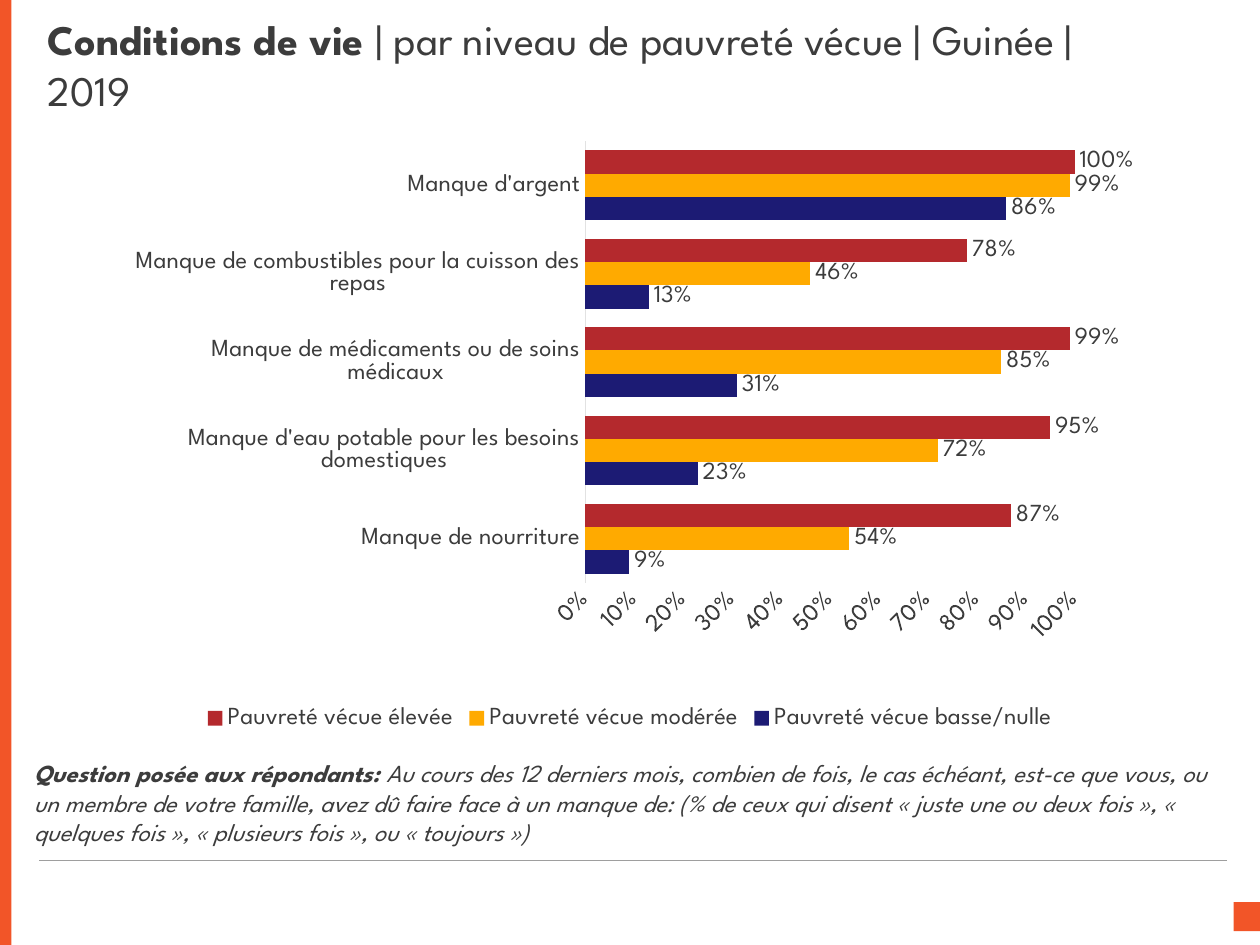
from lxml import etree
from pptx import Presentation
from pptx.chart.data import CategoryChartData
from pptx.dml.color import RGBColor
from pptx.enum.chart import XL_CHART_TYPE, XL_LABEL_POSITION, XL_LEGEND_POSITION, XL_TICK_MARK
from pptx.enum.shapes import MSO_CONNECTOR, MSO_SHAPE
from pptx.enum.text import MSO_ANCHOR, MSO_AUTO_SIZE, PP_ALIGN
from pptx.oxml import parse_xml
from pptx.oxml.ns import nsdecls, qn
from pptx.util import Inches, Pt

RECTANGLE = MSO_SHAPE.RECTANGLE
STRAIGHT = MSO_CONNECTOR.STRAIGHT
BARS = XL_CHART_TYPE.BAR_CLUSTERED
OUTSIDE_END = XL_LABEL_POSITION.OUTSIDE_END
BOTTOM = XL_LEGEND_POSITION.BOTTOM
NO_TICK = XL_TICK_MARK.NONE
LEFT = PP_ALIGN.LEFT
MIDDLE = MSO_ANCHOR.MIDDLE
NO_AUTOFIT = MSO_AUTO_SIZE.NONE

FONT = "League Spartan"
TEXT = "3C3C3C"
ORANGE = "F25528"


def color(value):
    return RGBColor.from_string(value)


def style(font, size, bold=None, italic=None):
    font.name = FONT
    font.size = Pt(size)
    font.bold = bold
    font.italic = italic
    font.color.rgb = color(TEXT)


deck = Presentation()
deck.slide_width = Inches(10)
deck.slide_height = Inches(7.5)
page = deck.slides.add_slide(deck.slide_layouts[5])

for left, top, width, height in [(9.79, 7.16, 0.22, 0.23), (0, 0, 0.09, 7.5)]:
    block = page.shapes.add_shape(
        RECTANGLE, Inches(left), Inches(top), Inches(width), Inches(height))
    block.shadow.inherit = False
    block.fill.solid()
    block.fill.fore_color.rgb = color(ORANGE)
    block.line.fill.background()

rule = page.shapes.add_connector(
    STRAIGHT, Inches(0.31), Inches(6.83), Inches(9.74), Inches(6.83))
rule.line.color.rgb = color("9E9E9E")
rule.line.width = Pt(0.25)
etree.SubElement(rule._element.spPr, qn("a:effectLst"))

title = page.shapes.title
title.left, title.top = Inches(0.28), Inches(0.09)
title.width, title.height = Inches(8.62), Inches(0.84)
title.text_frame.vertical_anchor = MIDDLE
question = page.shapes.add_textbox(
    Inches(0.17), Inches(5.97), Inches(9.63), Inches(0.84))

texts = [
    (title, 24, None,
     "Conditions de vie ",
     "| par niveau de pauvreté vécue | Guinée | 2019"),
    (question, 14, True,
     "Question posée aux répondants: ",
     "Au cours des 12 derniers mois, combien de fois, le cas échéant, est-ce que vous, "
     "ou un membre de votre famille, avez dû faire face à un manque de: (% de ceux qui "
     "disent « juste une ou deux fois », « quelques fois », « plusieurs fois », "
     "ou « toujours »)"),
]
for box, size, italic, lead, rest in texts:
    box.text_frame.word_wrap = True
    box.text_frame.auto_size = NO_AUTOFIT
    para = box.text_frame.paragraphs[0]
    para.alignment = LEFT
    for wording, bold in [(lead, True), (rest, False)]:
        span = para.add_run()
        span.text = wording
        style(span.font, size, bold, italic)

data = CategoryChartData(number_format="0%")
data.categories = [
    "Manque de nourriture",
    "Manque d'eau potable pour les besoins domestiques",
    "Manque de médicaments ou de soins médicaux",
    "Manque de combustibles pour la cuisson des repas",
    "Manque d'argent",
]
levels = [
    ("Pauvreté vécue basse/nulle", "1C1B74", [0.09, 0.23, 0.31, 0.13, 0.86]),
    ("Pauvreté vécue modérée", "FFAA00", [0.54, 0.72, 0.85, 0.46, 0.99]),
    ("Pauvreté vécue élevée", "B4292D", [0.87, 0.95, 0.99, 0.78, 1]),
]
for name, fill, values in levels:
    data.add_series(name, values)

chart = page.shapes.add_chart(
    BARS, Inches(1.06), Inches(0.98), Inches(7.94), Inches(4.85), data).chart
style(chart.font, 14)
chart.has_title = False
chart.has_legend = True
chart.legend.position = BOTTOM
chart.legend.include_in_layout = False
style(chart.legend.font, 14)

plot = chart.plots[0]
plot.gap_width = 80
plot.overlap = 0
plot.vary_by_categories = False
for series, (name, fill, values) in zip(plot.series, levels):
    series.format.fill.solid()
    series.format.fill.fore_color.rgb = color(fill)
    labels = series.data_labels
    labels.show_value = True
    labels.position = OUTSIDE_END
    labels.number_format = "0%"
    labels.number_format_is_linked = False
    style(labels.font, 14)

for axis in (chart.category_axis, chart.value_axis):
    axis.major_tick_mark = NO_TICK
    axis.minor_tick_mark = NO_TICK
    axis.has_major_gridlines = False
    style(axis.tick_labels.font, 14)
chart.category_axis.format.line.color.rgb = color("E2E2E2")
chart.category_axis.format.line.width = Pt(0.75)

scale = chart.value_axis
scale.minimum_scale = 0
scale.maximum_scale = 1
scale.major_unit = 0.1
scale.tick_labels.number_format = "0%"
scale.tick_labels.number_format_is_linked = False
scale.format.line.fill.background()
scale._element.find(qn("c:txPr")).find(qn("a:bodyPr")).set("rot", "-2700000")

plot_area = chart._chartSpace.chart.plotArea
for layout in plot_area.findall(qn("c:layout")):
    plot_area.remove(layout)
plot_area.insert(0, parse_xml(
    f'<c:layout {nsdecls("c")}><c:manualLayout><c:layoutTarget val="inner"/>'
    '<c:xMode val="edge"/><c:yMode val="edge"/><c:x val="0.455"/><c:y val="0.029"/>'
    '<c:w val="0.493"/><c:h val="0.723"/></c:manualLayout></c:layout>'))

deck.save("out.pptx")
